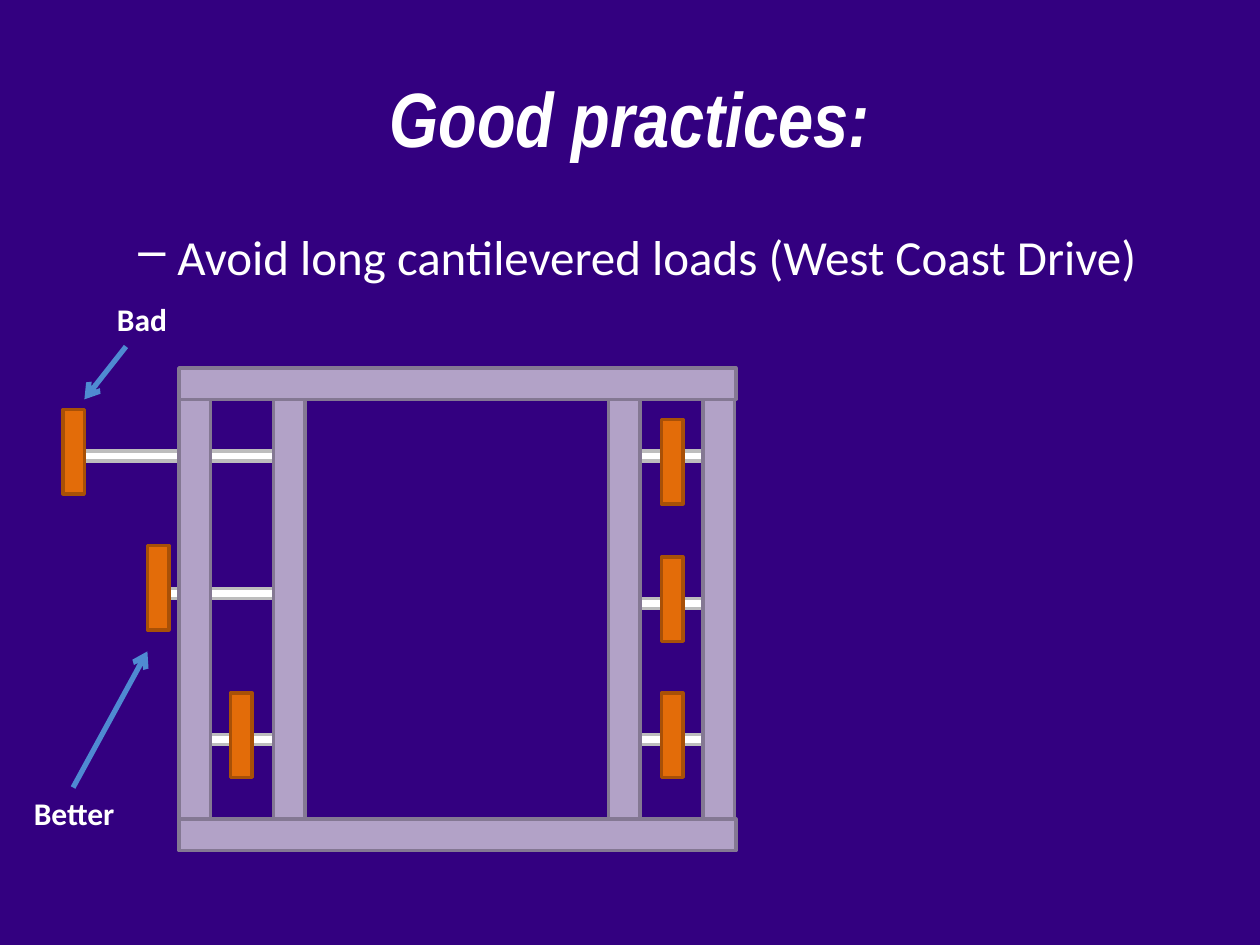
import pptx
import pptx.util
import pptx.dml.color
import pptx.enum.shapes
import pptx.enum.text
import pptx.oxml.ns
import lxml.etree

Inches = pptx.util.Inches
Pt = pptx.util.Pt
qn = pptx.oxml.ns.qn


def color(code):
    """Turn a hex string into a colour."""
    return pptx.dml.color.RGBColor.from_string(code)


class Deck:
    """Hold the style and the current slide."""

    white = "FFFFFF"
    ground = "330080"
    steel = ("B2A2C7", "847893")
    wheel = ("E36C09", "A85007")
    shaft = ("FFFFFF", "BDBDBD")
    arrow = "4F8AD2"
    body = "Calibri"
    head = "Arial Narrow"

    def __init__(self):
        """Start a deck with one title-only slide."""
        self.file = pptx.Presentation()
        self.file.slide_width = Inches(10)
        self.file.slide_height = Inches(7.5)
        self.slide = self.file.slides.add_slide(self.file.slide_layouts[5])
        fill = self.slide.background.fill
        fill.solid()
        fill.fore_color.rgb = color(self.ground)

    def style(self, para, face, size, bold=False, slant=False):
        """Set the font of a paragraph."""
        font = para.font
        font.name = face
        font.size = Pt(size)
        font.bold = bold
        font.italic = slant
        font.color.rgb = color(self.white)

    def title(self, text, left, top, width, height):
        """Place and format the title."""
        box = self.slide.shapes.title
        box.left, box.top = Inches(left), Inches(top)
        box.width, box.height = Inches(width), Inches(height)
        frame = box.text_frame
        frame.text = text
        frame.vertical_anchor = pptx.enum.text.MSO_ANCHOR.MIDDLE
        para = frame.paragraphs[0]
        para.alignment = pptx.enum.text.PP_ALIGN.CENTER
        self.style(para, self.head, 44, True, True)

    def text(self, text, left, top, width, height, size, bold=False, wrap=False):
        """Add a text box and return its paragraph."""
        box = self.slide.shapes.add_textbox(
            Inches(left), Inches(top), Inches(width), Inches(height))
        frame = box.text_frame
        frame.word_wrap = wrap
        frame.text = text
        para = frame.paragraphs[0]
        self.style(para, self.body, size, bold)
        return para

    def bullet(self, text, left, top, width, height):
        """Add a dashed list item with a hanging indent."""
        para = self.text(text, left, top, width, height, 28, wrap=True)
        props = para._p.get_or_add_pPr()
        props.set("marL", str(Inches(0.81)))
        props.set("indent", str(Inches(-0.31)))
        lxml.etree.SubElement(props, qn("a:buChar")).set("char", "–")

    def bar(self, left, top, width, height, tone):
        """Add a rectangle with a fill and outline pair."""
        rect = self.slide.shapes.add_shape(
            pptx.enum.shapes.MSO_SHAPE.RECTANGLE,
            Inches(left), Inches(top), Inches(width), Inches(height))
        rect.shadow.inherit = False
        rect.fill.solid()
        rect.fill.fore_color.rgb = color(tone[0])
        rect.line.color.rgb = color(tone[1])
        rect.line.width = Pt(2)

    def point(self, start, end):
        """Add a line with an open arrowhead at its end."""
        line = self.slide.shapes.add_connector(
            pptx.enum.shapes.MSO_CONNECTOR.STRAIGHT,
            *(Inches(n) for n in start + end))
        line.line.color.rgb = color(self.arrow)
        line.line.width = Pt(3)
        tail = lxml.etree.SubElement(line.line._get_or_add_ln(), qn("a:tailEnd"))
        tail.set("type", "arrow")
        lxml.etree.SubElement(line._element.spPr, qn("a:effectLst"))


def main():
    """Build the slide on drive frames."""
    deck = Deck()
    deck.title("Good practices:", 0.5, 0.3, 9, 1.25)
    deck.bullet("Avoid long cantilevered loads (West Coast Drive)",
                0.5, 1.75, 9, 4.95)

    for left, top, right in ((0.67, 3.58, 2.25), (1.33, 4.67, 2.25),
                             (1.67, 5.83, 2.25), (5.08, 3.58, 5.66),
                             (5.08, 4.75, 5.66), (5.08, 5.83, 5.66)):
        deck.bar(left, top, right - left, 0.08, deck.shaft)
    for left in (1.42, 2.17, 4.83, 5.58):
        deck.bar(left, 3.08, 0.25, 3.58, deck.steel)
    for top in (2.92, 6.5):
        deck.bar(1.42, top, 4.42, 0.25, deck.steel)
    for left, top in ((0.5, 3.25), (1.17, 4.33), (1.83, 5.5),
                      (5.25, 3.33), (5.25, 4.42), (5.25, 5.5)):
        deck.bar(left, top, 0.17, 0.67, deck.wheel)

    deck.point((1, 2.75), (0.67, 3.17))
    deck.point((0.58, 6.25), (1.17, 5.17))
    deck.text("Bad", 0.83, 2.33, 0.6, 0.4, 18, True)
    deck.text("Better", 0.17, 6.25, 0.85, 0.4, 18, True)
    deck.file.save("out.pptx")


if __name__ == "__main__":
    main()
